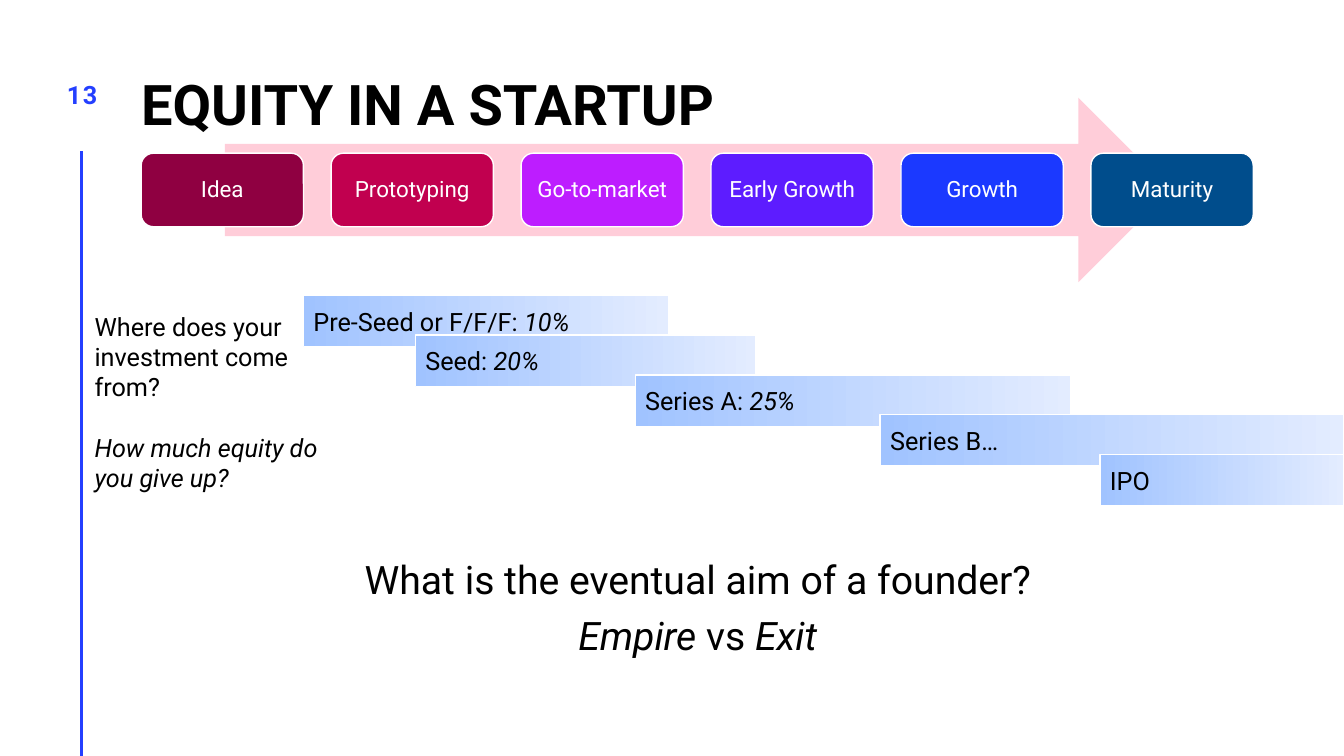
"""Build the slide on equity in a startup."""
from lxml.etree import SubElement
from pptx import Presentation
from pptx.dml.color import RGBColor
from pptx.enum.shapes import MSO_CONNECTOR, MSO_SHAPE
from pptx.enum.text import MSO_ANCHOR, MSO_AUTO_SIZE, PP_ALIGN
from pptx.oxml.ns import qn
from pptx.util import Inches, Pt

BLACK, WHITE, BLUE, PINK = "000000", "FFFFFF", "243FFF", "FFCDD9"
BAR_COLOURS = ("A0C3FF", "E3ECFF")
STAGES = [
    ("Idea", "8F0041"),
    ("Prototyping", "C1004F"),
    ("Go-to-market", "BD1DFF"),
    ("Early Growth", "5D1CFF"),
    ("Growth", "1B39FF"),
    ("Maturity", "004D8C"),
]
ROUNDS = [
    (0, 3.62, [("Pre-Seed or F/F/F: ", False), ("10%", True)]),
    (1.11, 3.38, [("Seed: ", False), ("20%", True)]),
    (3.29, 4.32, [("Series A: ", False), ("25%", True)]),
    (5.72, 4.6, [("Series B…", False)]),
    (7.9, 2.42, [("IPO", False)]),
]


def colour(code):
    """Turn a hex string into a colour."""
    return RGBColor.from_string(code)


def apply(target, values):
    """Set every attribute named in a dict of format values."""
    for name, value in values.items():
        setattr(target, name, value)


def place(shape, box):
    """Move a shape to a box given in inches."""
    apply(shape, dict(zip(("left", "top", "width", "height"), map(Inches, box))))


def write(shape, paragraphs, size, code=BLACK, bold=False, anchor=MSO_ANCHOR.TOP,
          margins=(0, 0), **layout):
    """Fill a shape with paragraphs, each a list of text and italic pairs."""
    frame = shape.text_frame
    across, down = map(Inches, margins)
    apply(frame, {"word_wrap": True, "auto_size": MSO_AUTO_SIZE.NONE,
                  "vertical_anchor": anchor, "margin_left": across,
                  "margin_right": across, "margin_top": down, "margin_bottom": down})
    for index, spans in enumerate(paragraphs):
        para = frame.add_paragraph() if index else frame.paragraphs[0]
        apply(para, {"alignment": PP_ALIGN.LEFT, **layout})
        for text, italic in spans:
            span = para.add_run()
            span.text = text
            apply(span.font, {"name": "Roboto", "size": Pt(size),
                              "bold": bold, "italic": italic})
            span.font.color.rgb = colour(code)
    return frame


def add_block(page, kind, box, fill=None, outlined=True):
    """Add a preset shape with a plain or graded fill and a thin white outline."""
    shape = page.shapes.add_shape(kind, *map(Inches, box))
    shape.shadow.inherit = False
    if fill:
        shape.fill.solid()
        shape.fill.fore_color.rgb = colour(fill)
    else:
        shape.fill.gradient()
        shape.fill.gradient_angle = 0
        for stop, code in zip(shape.fill.gradient_stops, BAR_COLOURS):
            stop.color.rgb = colour(code)
    if outlined:
        shape.line.color.rgb = colour(WHITE)
        shape.line.width = Pt(1)
    else:
        shape.line.fill.background()
    return shape


def add_side_rule(page, box):
    """Draw the vertical rule down the left edge of a box."""
    left, top, _, height = box
    rule = page.shapes.add_connector(
        MSO_CONNECTOR.STRAIGHT, *map(Inches, (left, top, left, top + height)))
    rule.line.color.rgb = colour(BLUE)
    rule.line.width = Pt(2)
    SubElement(rule._element.spPr, qn("a:effectLst"))


def add_page_number(page, box):
    """Write the page number with slightly spaced digits."""
    shape = page.shapes.add_textbox(*map(Inches, box))
    frame = write(shape, [[("13", False)]], 18, BLUE, True, alignment=PP_ALIGN.CENTER)
    frame.paragraphs[0].runs[0].font._element.set("spc", "100")


def fill_title(page, box):
    """Write the heading in the title placeholder."""
    title = page.shapes.title
    place(title, box)
    write(title, [[("EQUITY IN A STARTUP", False)]], 40, bold=True,
          anchor=MSO_ANCHOR.BOTTOM, line_spacing=Pt(40))


def fill_closing_question(page, box):
    """Write the centred closing question in the body placeholder."""
    body = page.placeholders[1]
    place(body, box)
    question = [("What is the eventual aim of a founder?", False)]
    answer = [("Empire", True), (" vs ", False), ("Exit", True)]
    frame = write(body, [question, answer], 28, alignment=PP_ALIGN.CENTER,
                  line_spacing=0.9, space_before=Pt(10))
    for para in frame.paragraphs:
        properties = para._p.get_or_add_pPr()
        properties.set("marL", "0")
        properties.set("indent", "0")
        SubElement(properties, qn("a:buNone"))


def add_funding_rounds(page, box):
    """Stagger the funding rounds downwards from the corner of a box."""
    left, top, _, height = box
    bar_height = 0.51
    step = (height - bar_height) / (len(ROUNDS) - 1)
    for index, (offset, width, spans) in enumerate(ROUNDS):
        bar = add_block(page, MSO_SHAPE.RECTANGLE,
                        (left + offset, top + index * step, width, bar_height))
        write(bar, [spans], 18, anchor=MSO_ANCHOR.MIDDLE, margins=(0.1, 0.05))


def add_funding_questions(page, box):
    """Write the two questions beside the funding rounds."""
    shape = page.shapes.add_textbox(*map(Inches, box))
    frame = write(shape, [[("Where does your investment come from?", False)],
                          [("How much equity do you give up?", True)]], 18,
                  anchor=MSO_ANCHOR.MIDDLE, margins=(0.1, 0.05))
    frame.paragraphs[1].space_before = Pt(21.5)


def add_stages(page, box):
    """Spread the startup stages evenly over an arrow that spans a box."""
    left, top, width, height = box
    card_width, card_height = 1.61, 0.73
    step = (width - card_width) / (len(STAGES) - 1)
    add_block(page, MSO_SHAPE.RIGHT_ARROW,
              (left + 0.83, top, width - 1.65, height), PINK, outlined=False)
    for index, (name, fill) in enumerate(STAGES):
        card = add_block(page, MSO_SHAPE.ROUNDED_RECTANGLE,
                         (left + index * step, top + (height - card_height) / 2,
                          card_width, card_height), fill)
        write(card, [[(name, False)]], 16, WHITE, anchor=MSO_ANCHOR.MIDDLE,
              margins=(0.07, 0.07), alignment=PP_ALIGN.CENTER, line_spacing=0.9)


def main():
    """Create the deck and save it."""
    deck = Presentation()
    apply(deck, {"slide_width": Inches(13.33), "slide_height": Inches(7.5)})
    page = deck.slides.add_slide(deck.slide_layouts[1])
    add_side_rule(page, (0.81, 1.5, 12.52, 6))
    fill_title(page, (1.4, -0.04, 11.03, 1.4))
    fill_closing_question(page, (1.14, 5.56, 11.56, 1.94))
    add_funding_rounds(page, (3.01, 2.93, 10.32, 2.09))
    add_funding_questions(page, (0.84, 2.94, 2.67, 2.09))
    add_stages(page, (1.4, 0.97, 11.03, 1.83))
    add_page_number(page, (0.53, 0.79, 0.57, 0.57))
    deck.save("out.pptx")


if __name__ == "__main__":
    main()
